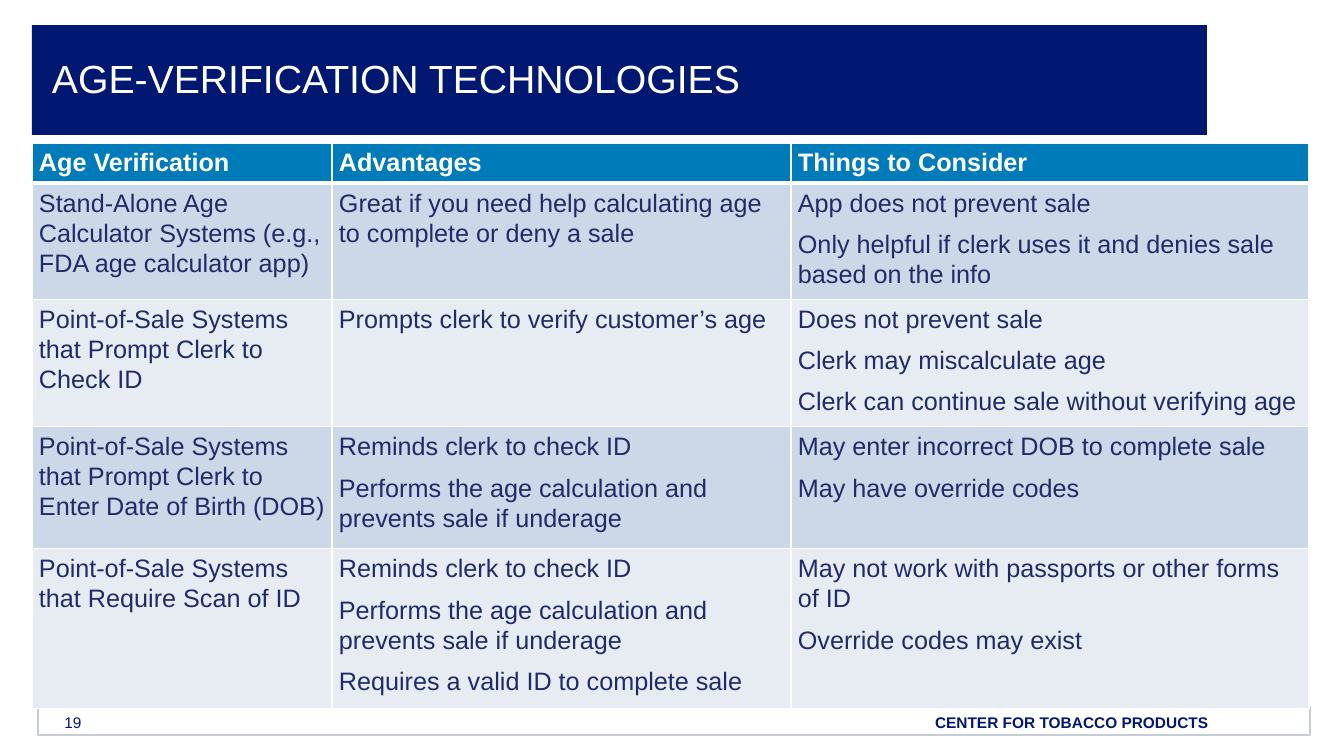
from lxml import etree
from pptx import Presentation
from pptx import util as u
from pptx.dml.color import RGBColor
from pptx.enum import shapes, text
from pptx.oxml.ns import qn

SCALE = 914400 / 100.8
COLOURS = {
    "navy": "001871", "blue": "007BBA", "ink": "212B67", "white": "FFFFFF",
    "grey": "C7CDD2", "band_dark": "CCD7E7", "band_light": "E7ECF3",
}
COLUMN_WIDTHS = [300, 459, 518]
ROW_HEIGHTS = [33, 102, 123, 122, 140]
HEADER = [["Age Verification"], ["Advantages"], ["Things to Consider"]]
TECHNOLOGIES = [
    [["Stand-Alone Age Calculator Systems (e.g., FDA age calculator app)"],
     ["Great if you need help calculating age to complete or deny a sale"],
     ["App does not prevent sale",
      "Only helpful if clerk uses it and denies sale based on the info"]],
    [["Point-of-Sale Systems that Prompt Clerk to Check ID"],
     ["Prompts clerk to verify customer’s age"],
     ["Does not prevent sale",
      "Clerk may miscalculate age",
      "Clerk can continue sale without verifying age"]],
    [["Point-of-Sale Systems that Prompt Clerk to Enter Date of Birth (DOB)"],
     ["Reminds clerk to check ID",
      "Performs the age calculation and prevents sale if underage"],
     ["May enter incorrect DOB to complete sale",
      "May have override codes"]],
    [["Point-of-Sale Systems that Require Scan of ID"],
     ["Reminds clerk to check ID",
      "Performs the age calculation and prevents sale if underage",
      "Requires a valid ID to complete sale"],
     ["May not work with passports or other forms of ID",
      "Override codes may exist"]],
]


def px(length):
    return u.Emu(round(length * SCALE))


def colour(name):
    return RGBColor.from_string(COLOURS[name])


def set_all(target, values):
    for name, value in values.items():
        setattr(target, name, value)


class SlideBuilder:
    font_name = "Arial"

    def __init__(self, slide):
        self.slide = slide

    def add_lines(self, frame, lines, size, ink, bold=False, **paragraph_format):
        for index, line in enumerate(lines):
            paragraph = frame.add_paragraph() if index else frame.paragraphs[0]
            set_all(paragraph, paragraph_format)
            run = paragraph.add_run()
            run.text = line
            set_all(run.font, {"name": self.font_name, "size": u.Pt(size), "bold": bold})
            run.font.color.rgb = colour(ink)

    def set_margins(self, target, horizontal, vertical):
        set_all(target, {
            "margin_left": px(horizontal), "margin_right": px(horizontal),
            "margin_top": px(vertical), "margin_bottom": px(vertical),
        })

    def title(self, words, left, top, width, height):
        shape = self.slide.shapes.title
        set_all(shape, {"left": px(left), "top": px(top),
                        "width": px(width), "height": px(height)})
        shape.fill.solid()
        shape.fill.fore_color.rgb = colour("navy")
        frame = shape.text_frame
        set_all(frame, {"word_wrap": True, "auto_size": text.MSO_AUTO_SIZE.NONE,
                        "vertical_anchor": text.MSO_ANCHOR.MIDDLE})
        self.set_margins(frame, 20, 5)
        self.add_lines(frame, [words], 28, "white", alignment=text.PP_ALIGN.LEFT,
                       line_spacing=u.Pt(31))

    def outline(self, left, top, width, height):
        shape = self.slide.shapes.add_shape(
            shapes.MSO_SHAPE.RECTANGLE, px(left), px(top), px(width), px(height))
        shape.shadow.inherit = False
        shape.fill.background()
        shape.line.color.rgb = colour("grey")
        shape.line.width = u.Pt(1.5)

    def label(self, words, left, top, width, height, bold, alignment):
        shape = self.slide.shapes.add_textbox(px(left), px(top), px(width), px(height))
        frame = shape.text_frame
        set_all(frame, {"word_wrap": True, "auto_size": text.MSO_AUTO_SIZE.SHAPE_TO_FIT_TEXT})
        self.set_margins(frame, 0, 0)
        self.add_lines(frame, [words], 11, "navy", bold, alignment=alignment)

    def borders(self, cell, bottom):
        properties = cell._tc.get_or_add_tcPr()
        widths = {"a:lnL": 1, "a:lnR": 1, "a:lnT": 1, "a:lnB": bottom}
        for index, (tag, width) in enumerate(widths.items()):
            line = etree.Element(qn(tag), w=str(int(u.Pt(width))))
            fill = etree.SubElement(line, qn("a:solidFill"))
            etree.SubElement(fill, qn("a:srgbClr"), val=COLOURS["white"])
            properties.insert(index, line)

    def cell(self, cell, lines, fill, ink, bold, top_row):
        cell.fill.solid()
        cell.fill.fore_color.rgb = colour(fill)
        self.borders(cell, 3 if top_row else 1)
        self.set_margins(cell, 7, 4)
        self.add_lines(cell.text_frame, lines, 18, ink, bold,
                       line_spacing=1.07, space_after=u.Pt(8))

    def table(self, rows, left, top, widths, heights):
        table = self.slide.shapes.add_table(
            len(rows), len(widths), px(left), px(top),
            px(sum(widths)), px(sum(heights))).table
        for column, width in zip(table.columns, widths):
            column.width = px(width)
        for row, height in zip(table.rows, heights):
            row.height = px(height)
        for row_index, row in enumerate(rows):
            band = "band_dark" if row_index % 2 else "band_light"
            style = (band, "ink", False, False) if row_index else ("blue", "white", True, True)
            for column_index, lines in enumerate(row):
                self.cell(table.cell(row_index, column_index), lines, *style)


def main():
    presentation = Presentation()
    presentation.slide_width = px(1344)
    presentation.slide_height = px(756)
    slide = presentation.slides.add_slide(presentation.slide_layouts[5])
    builder = SlideBuilder(slide)
    builder.outline(38, 707, 1272, 28)
    builder.label("CENTER FOR TOBACCO PRODUCTS", 935, 713, 375, 19, True, text.PP_ALIGN.LEFT)
    builder.label("19", 38, 713, 70, 19, False, text.PP_ALIGN.CENTER)
    builder.title("AGE-VERIFICATION TECHNOLOGIES", 32, 25, 1175, 110)
    builder.table([HEADER] + TECHNOLOGIES, 32, 143, COLUMN_WIDTHS, ROW_HEIGHTS)
    presentation.save("out.pptx")


if __name__ == "__main__":
    main()
